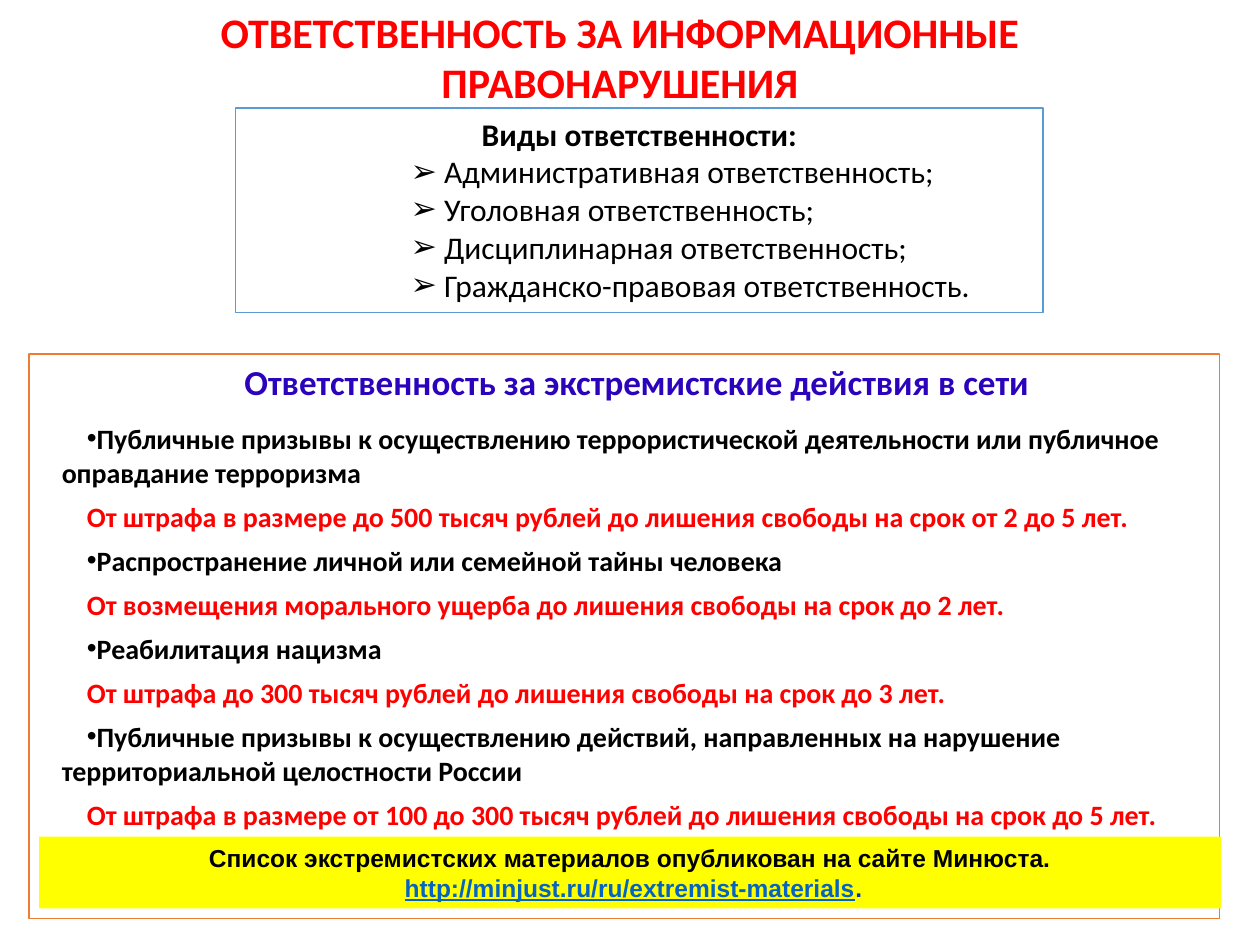
import pptx
import pptx.dml.color
import pptx.enum.shapes
import pptx.enum.text
import pptx.util
from lxml import etree
from pptx.oxml.ns import qn

Inches = pptx.util.Inches
Pt = pptx.util.Pt
ALIGN = pptx.enum.text.PP_ALIGN
ANCHOR = pptx.enum.text.MSO_ANCHOR

COLORS = {
    "white": "FFFFFF", "black": "000000", "red": "FF0000", "violet": "2B03BD",
    "blue": "5B9BD5", "orange": "ED7D31", "yellow": "FFFF00",
    "link": "0563C1", "stop": "0033CC",
}

LIABILITY_KINDS = [
    "Административная ответственность;",
    "Уголовная ответственность;",
    "Дисциплинарная ответственность;",
    "Гражданско-правовая ответственность.",
]

# Each offence with its penalty
OFFENCES = [
    ("Публичные призывы к осуществлению террористической деятельности "
     "или публичное оправдание терроризма",
     "От штрафа в размере до 500 тысяч рублей до лишения свободы на срок от 2 до 5 лет."),
    ("Распространение личной или семейной тайны человека",
     "От возмещения морального ущерба до лишения свободы на срок до 2 лет."),
    ("Реабилитация нацизма",
     "От штрафа до 300 тысяч рублей до лишения свободы на срок до 3 лет."),
    ("Публичные призывы к осуществлению действий, направленных на нарушение "
     "территориальной целостности России",
     "От штрафа в размере от 100 до 300 тысяч рублей до лишения свободы на срок до 5 лет."),
]


def rgb(name):
    return pptx.dml.color.RGBColor.from_string(COLORS[name])


def place(holder, left, top, width, height):
    box = {"left": left, "top": top, "width": width, "height": height}
    for attribute, value in box.items():
        setattr(holder, attribute, Inches(value))


def prepare_text(holder, anchor=ANCHOR.TOP):
    frame = holder.text_frame
    settings = {
        "word_wrap": True,
        "auto_size": pptx.enum.text.MSO_AUTO_SIZE.NONE,
        "vertical_anchor": anchor,
        "margin_left": Inches(0.1), "margin_right": Inches(0.1),
        "margin_top": Inches(0.05), "margin_bottom": Inches(0.05),
    }
    for attribute, value in settings.items():
        setattr(frame, attribute, value)
    return frame


def add_panel(slide, box, fill, line=None, anchor=ANCHOR.TOP):
    panel = slide.shapes.add_shape(
        pptx.enum.shapes.MSO_SHAPE.RECTANGLE, *map(Inches, box))
    panel.shadow.inherit = False
    panel.fill.solid()
    panel.fill.fore_color.rgb = rgb(fill)
    if line:
        panel.line.color.rgb = rgb(line)
        panel.line.width = Pt(1)
    else:
        panel.line.fill.background()
    return prepare_text(panel, anchor)


def add_run(paragraph, text, color="black", **font):
    run = paragraph.add_run()
    run.text = text
    run.font.color.rgb = rgb(color)
    for attribute, value in {"name": "Calibri", "bold": True, **font}.items():
        setattr(run.font, attribute, value)


def add_paragraph(frame, align=ALIGN.LEFT, level=0, before=0,
                  margin=0, indent=0, bullet=None):
    first = frame.paragraphs[0]
    paragraph = first if not first.runs else frame.add_paragraph()
    values = {"alignment": align, "level": level, "space_before": Pt(before)}
    for attribute, value in values.items():
        setattr(paragraph, attribute, value)
    # Indents and bullet
    properties = paragraph._p.get_or_add_pPr()
    properties.set("marL", str(Inches(margin)))
    properties.set("indent", str(Inches(indent)))
    if bullet:
        etree.SubElement(properties, qn("a:buFont")).set("typeface", "Arial")
        etree.SubElement(properties, qn("a:buChar")).set("char", bullet)
    else:
        etree.SubElement(properties, qn("a:buNone"))
    return paragraph


def fill_title(title):
    place(title, 0.31, 0, 9.22, 0.91)
    heading = add_paragraph(prepare_text(title), ALIGN.CENTER)
    add_run(heading, "ОТВЕТСТВЕННОСТЬ ЗА ИНФОРМАЦИОННЫЕ ПРАВОНАРУШЕНИЯ",
            "red", size=Pt(24))


def add_liability_kinds(slide):
    kinds = add_panel(slide, (1.87, 0.86, 6.41, 1.62), "white", "blue")
    add_run(add_paragraph(kinds, ALIGN.CENTER), "Виды ответственности:", size=Pt(18))
    for kind in LIABILITY_KINDS:
        item = add_paragraph(kinds, level=2, margin=1, indent=0.29, bullet="➢")
        add_run(item, " " + kind, size=Pt(18), bold=False)


def add_extremism_frame(slide):
    extremism = add_panel(slide, (0.23, 2.81, 9.45, 4.48), "white", "orange")
    add_run(add_paragraph(extremism, ALIGN.CENTER, indent=0.2),
            "Ответственность за экстремистские действия в сети",
            "violet", size=Pt(20))


def fill_offences(slide, offences):
    slide.shapes._spTree.append(offences._element)  # in front of the frame
    place(offences, 0.39, 3.28, 9.15, 3.38)
    offences.fill.solid()
    offences.fill.fore_color.rgb = rgb("white")
    frame = prepare_text(offences, ANCHOR.MIDDLE)
    for offence, penalty in OFFENCES:
        for text, color, bullet in ((offence, "black", "•"), (penalty, "red", None)):
            item = add_paragraph(frame, before=6, indent=0.2, bullet=bullet)
            add_run(item, text, color, size=Pt(16))


def add_materials_banner(slide):
    banner = add_panel(slide, (0.31, 6.64, 9.38, 0.57), "yellow", anchor=ANCHOR.MIDDLE)
    font = {"name": "Arial", "size": Pt(14)}
    add_run(add_paragraph(banner, ALIGN.CENTER),
            "Список экстремистских материалов опубликован на сайте Минюста.", **font)
    address = add_paragraph(banner, ALIGN.CENTER)
    add_run(address, " ", **font)
    add_run(address, "http://minjust.ru/ru/extremist-materials", "link",
            underline=True, **font)
    add_run(address, ".", "stop", **font)


def main():
    presentation = pptx.Presentation()
    presentation.slide_width = Inches(10)
    presentation.slide_height = Inches(7.5)
    slide = presentation.slides.add_slide(presentation.slide_layouts[1])
    title, offences = slide.placeholders

    fill_title(title)
    add_liability_kinds(slide)
    add_extremism_frame(slide)
    fill_offences(slide, offences)
    add_materials_banner(slide)
    presentation.save("out.pptx")


if __name__ == "__main__":
    main()
